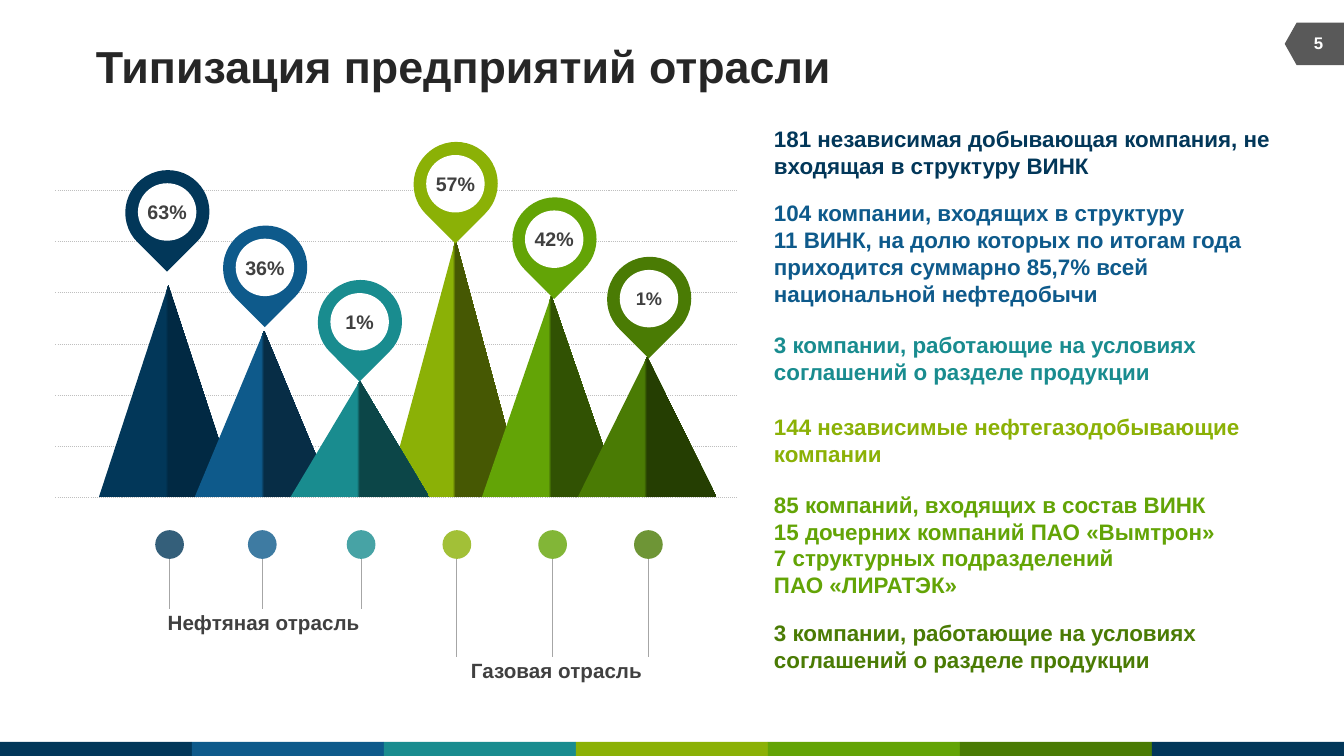
from collections import namedtuple

from lxml import etree
from pptx import Presentation
from pptx.dml.color import RGBColor
from pptx.enum.dml import MSO_LINE
from pptx.enum.shapes import MSO_CONNECTOR, MSO_SHAPE
from pptx.enum.text import MSO_ANCHOR, MSO_AUTO_SIZE, PP_ALIGN
from pptx.oxml.ns import qn
from pptx.util import Inches, Pt

RECTANGLE, TRIANGLE = MSO_SHAPE.RECTANGLE, MSO_SHAPE.ISOSCELES_TRIANGLE
TEARDROP, OVAL = MSO_SHAPE.TEAR, MSO_SHAPE.OVAL
PAGE_TAG = MSO_SHAPE.FLOWCHART_OFFPAGE_CONNECTOR
STRAIGHT, DOTTED = MSO_CONNECTOR.STRAIGHT, MSO_LINE.ROUND_DOT
LEFT, CENTER = PP_ALIGN.LEFT, PP_ALIGN.CENTER
MIDDLE, TOP = MSO_ANCHOR.MIDDLE, MSO_ANCHOR.TOP
FIT_TEXT, NO_FIT = MSO_AUTO_SIZE.SHAPE_TO_FIT_TEXT, MSO_AUTO_SIZE.NONE

WHITE = RGBColor(0xFF, 0xFF, 0xFF)
INK = RGBColor(0x26, 0x26, 0x26)
LABEL_GRAY = RGBColor(0x40, 0x40, 0x40)
TAG_GRAY = RGBColor(0x59, 0x59, 0x59)
STEM_GRAY = RGBColor(0xA6, 0xA6, 0xA6)
GRID_GRAY = RGBColor(0xBF, 0xBF, 0xBF)
NAVY, NAVY_SHADE = RGBColor(0x02, 0x37, 0x59), RGBColor(0x01, 0x29, 0x43)
BLUE, BLUE_SHADE = RGBColor(0x0E, 0x5A, 0x8B), RGBColor(0x07, 0x2D, 0x46)
TEAL, TEAL_SHADE = RGBColor(0x19, 0x8C, 0x8F), RGBColor(0x0C, 0x46, 0x48)
LIME, LIME_SHADE = RGBColor(0x8B, 0xB1, 0x06), RGBColor(0x46, 0x58, 0x03)
GREEN, GREEN_SHADE = RGBColor(0x63, 0xA4, 0x06), RGBColor(0x31, 0x52, 0x03)
FOREST, FOREST_SHADE = RGBColor(0x4A, 0x7B, 0x04), RGBColor(0x25, 0x3E, 0x02)

# Grid of square cells, ten to the inch
CELL = Inches(0.1)
COLUMNS, ROWS = 133.33, 75
BASE_ROW = 49.35
PEAK_LEFT, PEAK_STEP, PEAK_WIDTH = 9.8, 9.5, 13.8
DOT_ROW, DOT_SIZE = 52.6, 2.85

Peak = namedtuple("Peak", "color shade top pin_left pin_top share share_size dot_left")
PEAKS = [
    Peak(NAVY, NAVY_SHADE, 28.3, 12.4, 16.9, "63%", 14, 15.4),
    Peak(BLUE, BLUE_SHADE, 32.8, 22.1, 22.4, "36%", 14, 24.6),
    Peak(TEAL, TEAL_SHADE, 37.8, 31.5, 27.8, "1%", 14, 34.4),
    Peak(LIME, LIME_SHADE, 23.8, 41, 14.1, "57%", 14, 43.9),
    Peak(GREEN, GREEN_SHADE, 29.3, 50.8, 19.6, "42%", 14, 53.4),
    Peak(FOREST, FOREST_SHADE, 35.4, 60.2, 25.5, "1%", 13, 62.9),
]
DRAW_ORDER = [0, 1, 3, 2, 4, 5]

NOTES = [
    (11.9, 6.4, "181 независимая добывающая компания, не входящая в структуру ВИНК"),
    (19.3, 11.8, "104 компании, входящих в структуру\n11 ВИНК, на долю которых по итогам "
                 "года приходится суммарно 85,7% всей национальной нефтедобычи"),
    (32.4, 6.4, "3 компании, работающие на условиях соглашений о разделе продукции"),
    (40.5, 6.4, "144 независимые нефтегазодобывающие компании"),
    (48.2, 11.8, "85 компаний, входящих в состав ВИНК\n15 дочерних компаний ПАО «Вымтрон»\n"
                 "7 структурных подразделений\nПАО «ЛИРАТЭК»"),
    (60.9, 6.4, "3 компании, работающие на условиях соглашений о разделе продукции"),
]

# Label text, left, width, row, peaks it gathers
BRANCHES = [
    ("Нефтяная отрасль", 10.8, 30.7, 60.5, PEAKS[:3]),
    ("Газовая отрасль", 40.1, 30.2, 65.3, PEAKS[3:]),
]


class SlideBuilder:
    """Holds the style and the current slide; lengths are grid cells."""

    font = "Arial"

    def __init__(self, presentation):
        self.slide = presentation.slides.add_slide(presentation.slide_layouts[5])

    def cells(self, *lengths):
        return [round(length * CELL) for length in lengths]

    def set_text(self, shape, text, size, color, align=LEFT, anchor=MIDDLE,
                 inset=True, wrap=True, fit=NO_FIT):
        frame = shape.text_frame
        frame.text = text
        frame.word_wrap, frame.auto_size = wrap, fit
        frame.vertical_anchor = anchor
        if not inset:
            frame.margin_left = frame.margin_right = 0
            frame.margin_top = frame.margin_bottom = 0
        for paragraph in frame.paragraphs:
            paragraph.alignment = align
            for run in paragraph.runs:
                run.font.name, run.font.size = self.font, Pt(size)
                run.font.bold = True
                run.font.color.rgb = color

    def title(self, text, *box):
        title = self.slide.shapes.title
        title.left, title.top, title.width, title.height = self.cells(*box)
        self.set_text(title, text, 32, INK, inset=False, wrap=False)

    def text(self, text, box, size, color, **layout):
        text_box = self.slide.shapes.add_textbox(*self.cells(*box))
        self.set_text(text_box, text, size, color, **layout)

    def shape(self, kind, box, color, rotation=0, opacity=100):
        shape = self.slide.shapes.add_shape(kind, *self.cells(*box))
        shape.shadow.inherit = False
        shape.line.fill.background()
        shape.fill.solid()
        shape.fill.fore_color.rgb = color
        shape.rotation = rotation
        if opacity < 100:
            tint = shape._element.spPr.find(qn("a:solidFill")).find(qn("a:srgbClr"))
            etree.SubElement(tint, qn("a:alpha"), val=str(opacity * 1000))
        return shape

    def line(self, start, end, color, dash=None):
        line = self.slide.shapes.add_connector(STRAIGHT, *self.cells(*start, *end))
        line.line.color.rgb = color
        line.line.width = Pt(0.75)
        if dash:
            line.line.dash_style = dash
        etree.SubElement(line._element.spPr, qn("a:effectLst"))

    def mountain(self, left, peak):
        box = (left, peak.top, PEAK_WIDTH, BASE_ROW - peak.top)
        fill = self.shape(TRIANGLE, box, peak.color).fill
        fill.gradient()
        fill.gradient_angle = 0
        sides = ((0.48, peak.color), (0.5, peak.shade))
        for stop, (position, color) in zip(fill.gradient_stops, sides):
            stop.position = position
            stop.color.rgb = color

    def pin(self, peak):
        self.shape(TEARDROP, (peak.pin_left, peak.pin_top, 8.4, 8.3), peak.color, rotation=135)
        hole = self.shape(OVAL, (peak.pin_left + 1.28, peak.pin_top + 1.28, 5.8, 5.7), WHITE)
        self.set_text(hole, peak.share, peak.share_size, LABEL_GRAY, align=CENTER, inset=False)

    def legend_dot(self, peak, stem_end):
        self.shape(OVAL, (peak.dot_left, DOT_ROW, DOT_SIZE, DOT_SIZE), peak.color, opacity=80)
        center = peak.dot_left + DOT_SIZE / 2
        self.line((center, DOT_ROW + DOT_SIZE), (center, stem_end), STEM_GRAY)


def main():
    presentation = Presentation()
    presentation.slide_width = round(COLUMNS * CELL)
    presentation.slide_height = ROWS * CELL
    builder = SlideBuilder(presentation)

    # Bottom colour band
    band_colors = [peak.color for peak in PEAKS] + [NAVY]
    band_width = COLUMNS / len(band_colors)
    for index, color in enumerate(band_colors):
        builder.shape(RECTANGLE, (index * band_width, 73.6, band_width, 1.4), color)

    # Page number and title
    builder.shape(PAGE_TAG, (128.3, 1.4, 4.2, 5.9), TAG_GRAY, rotation=90)
    builder.text("5", (128, 2.2, 5.6, 4), 12, WHITE, align=CENTER)
    builder.title("Типизация предприятий отрасли", 9.5, 3.9, 82.2, 5.2)

    # Grid lines
    for index in range(7):
        row = 18.9 + index * 5.08
        builder.line((5.5, row), (73.2, row), GRID_GRAY, DOTTED)

    # Mountains and pins
    for index in DRAW_ORDER:
        builder.mountain(PEAK_LEFT + index * PEAK_STEP, PEAKS[index])
    for peak in PEAKS:
        builder.pin(peak)

    # Notes, each in the colour of its peak
    for peak, (row, height, note) in zip(PEAKS, NOTES):
        builder.text(note, (75.8, row, 51.5, height), 16, peak.color, anchor=TOP, fit=FIT_TEXT)

    # Legend of the two branches
    for label, left, width, row, peaks in BRANCHES:
        for peak in peaks:
            builder.legend_dot(peak, row - 0.1)
        builder.text(label, (left, row, width, 2.5), 14.7, LABEL_GRAY, align=CENTER,
                     anchor=TOP, inset=False, fit=FIT_TEXT)

    presentation.save("out.pptx")


if __name__ == "__main__":
    main()
